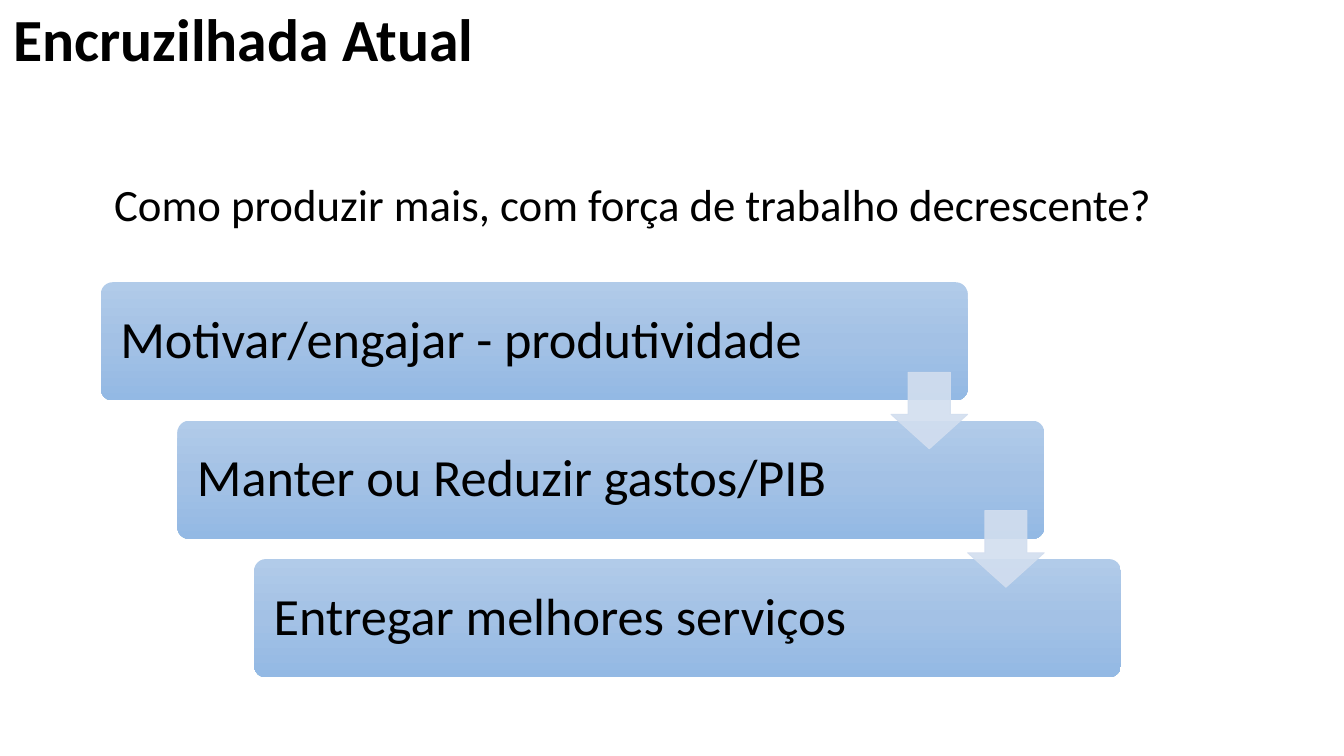
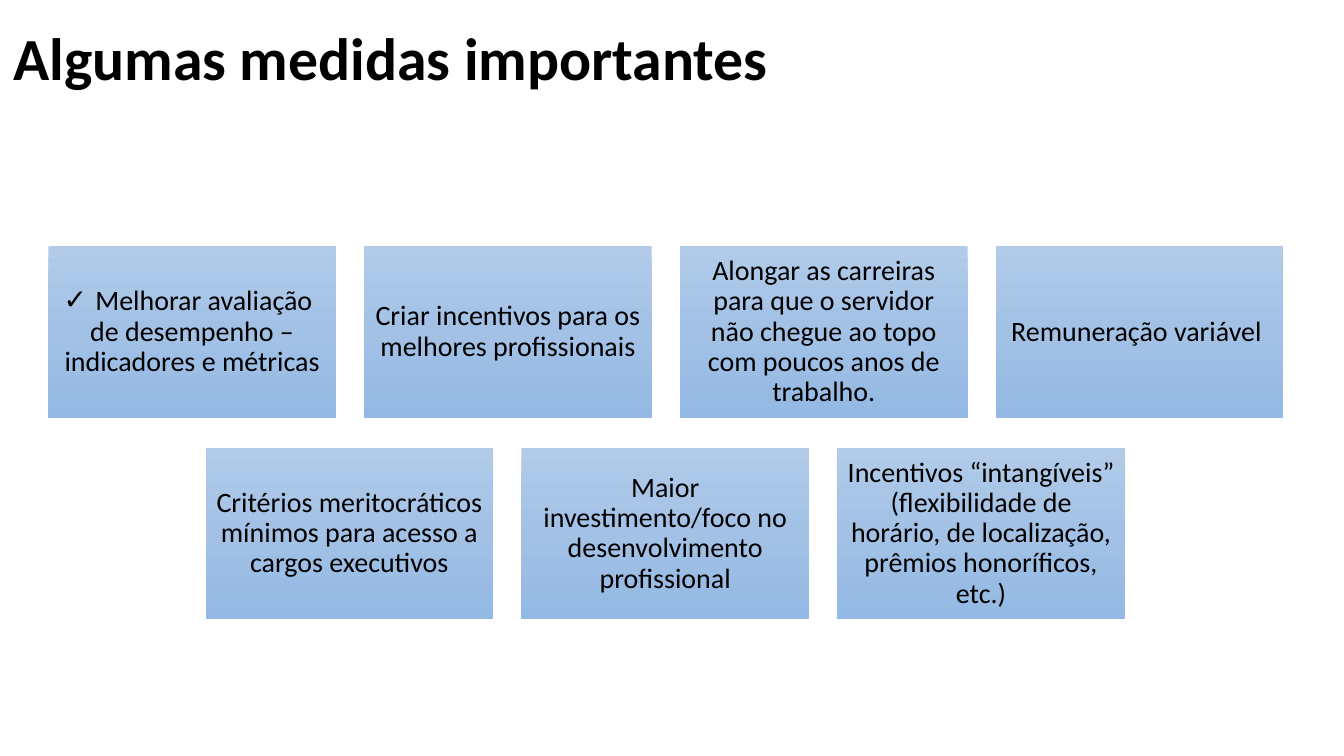
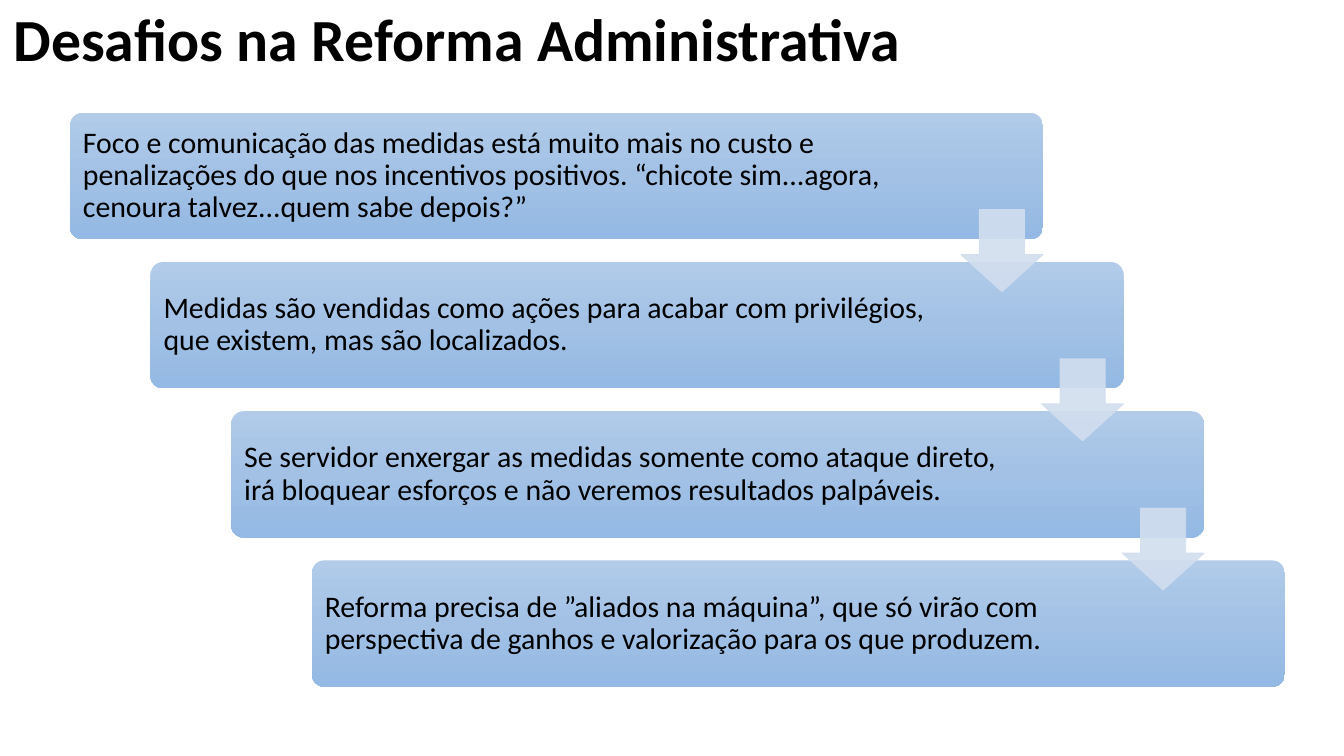
from copy import deepcopy
from typing import NamedTuple

from lxml import etree
from pptx import Presentation
from pptx.dml.color import RGBColor
from pptx.enum.shapes import MSO_SHAPE
from pptx.enum.text import MSO_ANCHOR, MSO_AUTO_SIZE, PP_ALIGN
from pptx.oxml.ns import qn
from pptx.util import Emu, Pt

RECTANGLE = MSO_SHAPE.RECTANGLE
ROUNDED = MSO_SHAPE.ROUNDED_RECTANGLE
DOWN_ARROW = MSO_SHAPE.DOWN_ARROW
MIDDLE = MSO_ANCHOR.MIDDLE
LEFT, CENTER = PP_ALIGN.LEFT, PP_ALIGN.CENTER
FIT_SHAPE, NO_FIT = MSO_AUTO_SIZE.SHAPE_TO_FIT_TEXT, MSO_AUTO_SIZE.NONE

# Shared look: 100 px to the inch
EMU_PER_PX = 9144
SLIDE_WIDTH = 1000
FONT = "Calibri"
TITLE_ONLY = 5
COLORS = {
    "text": "000000",
    "box_top": "B1CBE9",
    "box_middle": "A3C1E5",
    "box_bottom": "93B9E4",
    "arrow": "D2DEEF",
}
BOX_GRADIENT = [(0, "box_top"), (0.5, "box_middle"), (1, "box_bottom")]
ARROW_ALPHA = "90000"


class Box(NamedTuple):
    left: int
    top: int
    width: int
    height: int


class Step(NamedTuple):
    text: str
    right_inset: int


class Cascade(NamedTuple):
    first: Box
    shift_x: int
    shift_y: int
    inset: int
    font_size: int
    arrow_size: int
    arrow_drop: int
    steps: list[Step]


class Measure(NamedTuple):
    text: str
    bullet: str = ""


# Content
CROSSROADS = Cascade(
    Box(75, 210, 645, 88), 57, 103, 12, 28, 57, 67,
    [
        Step("Motivar/engajar - produtividade", 102),
        Step("Manter ou Reduzir gastos/PIB", 126),
        Step("Entregar melhores serviços", 126),
    ],
)
CHALLENGES = Cascade(
    Box(52, 84, 724, 94), 60, 111, 7, 16, 61, 72,
    [
        Step("Foco e comunicação das medidas está muito mais no custo e "
             "penalizações do que nos incentivos positivos. “chicote "
             "sim...agora, cenoura talvez...quem sabe depois?”", 109),
        Step("Medidas são vendidas como ações para acabar com privilégios, "
             "que existem, mas são localizados.", 127),
        Step("Se servidor enxergar as medidas somente como ataque direto, "
             "irá bloquear esforços e não veremos resultados palpáveis.", 127),
        Step("Reforma precisa de ”aliados na máquina”, que só virão com "
             "perspectiva de ganhos e valorização para os que produzem.", 127),
    ],
)
MEASURE_ROWS = [
    [
        Measure("Melhorar avaliação de desempenho – indicadores e métricas", "✓"),
        Measure("Criar incentivos para os melhores profissionais"),
        Measure("Alongar as carreiras para que o servidor não chegue ao topo "
                "com poucos anos de trabalho."),
        Measure("Remuneração variável "),
    ],
    [
        Measure("Critérios meritocráticos mínimos para acesso a cargos executivos"),
        Measure("Maior investimento/foco no desenvolvimento profissional"),
        Measure("Incentivos “intangíveis” (flexibilidade de horário, de "
                "localização, prêmios honoríficos, etc.)"),
    ],
]
MEASURE_WIDTH, MEASURE_HEIGHT, MEASURE_INSET = 214, 128, 7
MEASURE_GAP, MEASURE_TOP, MEASURE_PITCH_Y = 21, 183, 150
MEASURES_CENTER = 495


def px(length: int) -> Emu:
    return Emu(length * EMU_PER_PX)


def color(name: str) -> RGBColor:
    return RGBColor.from_string(COLORS[name])


def place(box: Box) -> list[Emu]:
    return [px(length) for length in box]


def write(frame, text: str, size: int, align=LEFT, bold: bool = False,
          spacing: float = 0.9):
    """Fill a text frame with one formatted paragraph and return it."""
    frame.text = text
    frame.word_wrap = True
    paragraph = frame.paragraphs[0]
    paragraph.alignment = align
    paragraph.line_spacing = spacing
    for run in paragraph.runs:
        run.font.name = FONT
        run.font.size = Pt(size)
        run.font.bold = bold
        run.font.color.rgb = color("text")
    return paragraph


def set_insets(frame, inset: int, right_inset: int) -> None:
    frame.margin_left = frame.margin_top = frame.margin_bottom = px(inset)
    frame.margin_right = px(right_inset)
    frame.vertical_anchor = MIDDLE


def add_titled_slide(deck, title: str, top: int = 0):
    slide = deck.slides.add_slide(deck.slide_layouts[TITLE_ONLY])
    heading = slide.shapes.title
    heading.left, heading.top, heading.width, heading.height = place(
        Box(0, top, 772, 63))
    write(heading.text_frame, title, 32, bold=True)
    heading.text_frame.vertical_anchor = MIDDLE
    heading.text_frame.auto_size = NO_FIT
    return slide


def add_gradient_box(slide, kind, box: Box):
    shape = slide.shapes.add_shape(kind, *place(box))
    shape.shadow.inherit = False
    shape.line.fill.background()
    shape.fill.gradient()
    shape.fill.gradient_angle = 270
    # The middle stop is cloned from the first
    stop_list = next(shape.element.iter(qn("a:gsLst")))
    stop_list.insert(1, deepcopy(stop_list[0]))
    for stop, (position, name) in zip(shape.fill.gradient_stops, BOX_GRADIENT):
        stop.position = position
        stop.color.rgb = color(name)
    return shape


def add_arrow(slide, box: Box) -> None:
    arrow = slide.shapes.add_shape(DOWN_ARROW, *place(box))
    arrow.shadow.inherit = False
    arrow.adjustments[0], arrow.adjustments[1] = 0.55, 0.45
    arrow.line.width = Pt(0.5)
    for fill in (arrow.fill, arrow.line.fill):
        fill.solid()
        fill.fore_color.rgb = color("arrow")
    for rgb in arrow.element.spPr.iter(qn("a:srgbClr")):
        etree.SubElement(rgb, qn("a:alpha"), val=ARROW_ALPHA)


def add_cascade(slide, cascade: Cascade) -> None:
    boxes = [
        cascade.first._replace(left=cascade.first.left + i * cascade.shift_x,
                               top=cascade.first.top + i * cascade.shift_y)
        for i in range(len(cascade.steps))
    ]
    for box, step in zip(boxes, cascade.steps):
        shape = add_gradient_box(slide, ROUNDED, box)
        shape.adjustments[0] = 0.1
        set_insets(shape.text_frame, cascade.inset, step.right_inset)
        write(shape.text_frame, step.text, cascade.font_size)
    # Arrows sit on the right edge of every step but the last
    size = cascade.arrow_size
    for box in boxes[:-1]:
        add_arrow(slide, Box(box.left + box.width - size,
                             box.top + cascade.arrow_drop, size, size))


def add_measure(slide, measure: Measure, left: int, top: int) -> None:
    card = add_gradient_box(slide, RECTANGLE,
                            Box(left, top, MEASURE_WIDTH, MEASURE_HEIGHT))
    set_insets(card.text_frame, MEASURE_INSET, MEASURE_INSET)
    paragraph = write(card.text_frame, measure.text, 15, CENTER)
    if measure.bullet:
        properties = paragraph._p.get_or_add_pPr()
        etree.SubElement(properties, qn("a:buFont"), typeface=FONT)
        etree.SubElement(properties, qn("a:buChar"), char=measure.bullet)


def add_measures(slide) -> None:
    pitch_x = MEASURE_WIDTH + MEASURE_GAP
    for row, measures in enumerate(MEASURE_ROWS):
        row_width = len(measures) * pitch_x - MEASURE_GAP
        row_left = MEASURES_CENTER - row_width // 2
        for column, measure in enumerate(measures):
            add_measure(slide, measure, row_left + column * pitch_x,
                        MEASURE_TOP + row * MEASURE_PITCH_Y)


def main() -> None:
    deck = Presentation()
    # Widescreen, 16:9
    deck.slide_width = px(SLIDE_WIDTH)
    deck.slide_height = Emu(deck.slide_width * 9 // 16)

    # Crossroads
    crossroads = add_titled_slide(deck, "Encruzilhada Atual")
    question = crossroads.shapes.add_textbox(*place(Box(75, 124, 835, 51)))
    paragraph = write(question.text_frame,
                      "Como produzir mais, com força de trabalho decrescente?",
                      24, spacing=1.07)
    paragraph.space_after = Pt(8)
    question.text_frame.auto_size = FIT_SHAPE
    add_cascade(crossroads, CROSSROADS)

    # Measures
    add_measures(add_titled_slide(deck, "Algumas medidas importantes", 14))

    # Challenges
    add_cascade(add_titled_slide(deck, "Desafios na Reforma Administrativa"),
                CHALLENGES)

    deck.save("out.pptx")


if __name__ == "__main__":
    main()
